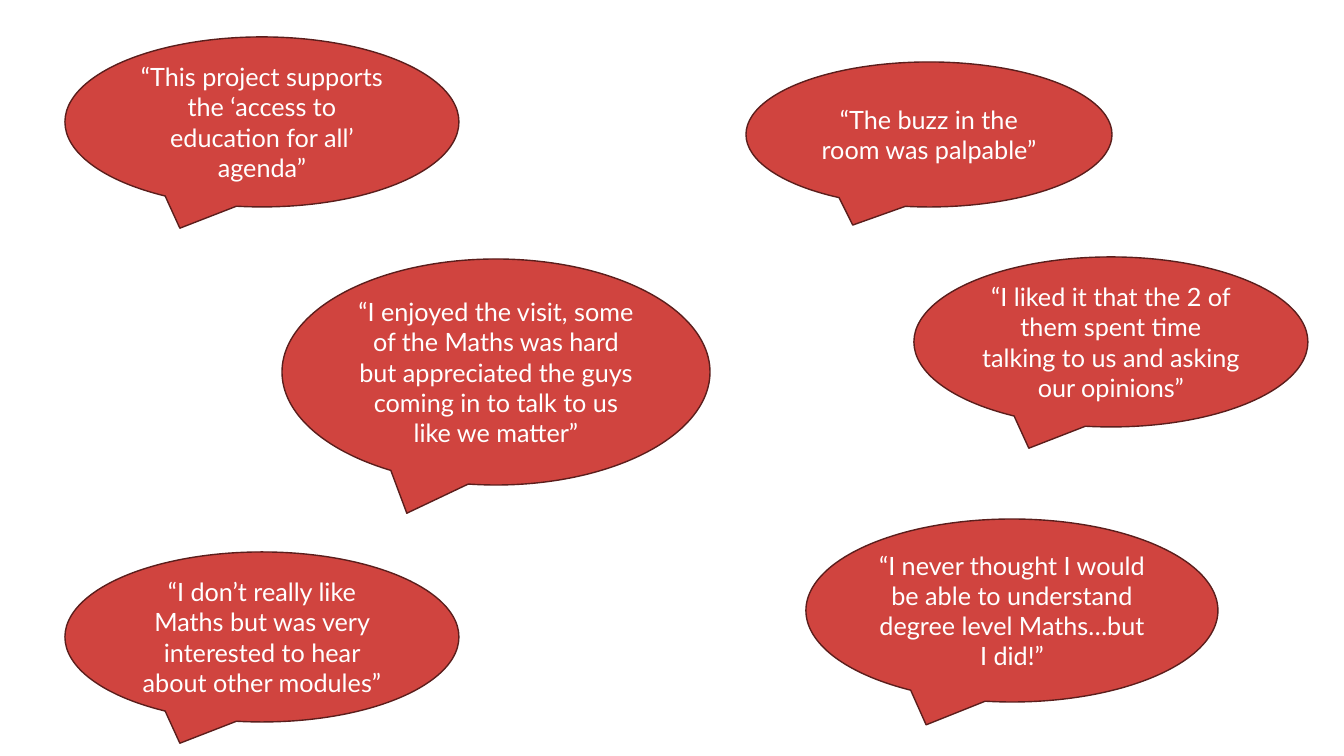
from pptx import Presentation
from pptx.dml.color import RGBColor
from pptx.enum import shapes, text
from pptx import util as u

THEME = {
    "fill": RGBColor.from_string("D0443F"),
    "line": RGBColor.from_string("5B1E1C"),
    "ink": RGBColor.from_string("FFFFFF"),
    "font": "Lato",
    "size": u.Pt(18),
    "edge": u.Pt(1),
}


def px(n):
    return u.Emu(round(n * 914400 / 100.8))


# Slide
deck = Presentation()
deck.slide_width, deck.slide_height = px(1344), px(756)
slide = deck.slides.add_slide(deck.slide_layouts[6])

# Quotes: left, top, width, height, words
STD = (394, 170)
quotes = [
    (65, 37, *STD, "“This project supports the ‘access to education for all’ agenda”"),
    (806, 519, 412, 183, "“I never thought I would be able to understand degree level Maths…but I did!”"),
    (914, 257, *STD, "“I liked it that the 2 of them spent time talking to us and asking our opinions”"),
    (746, 62, 366, 145, "“The buzz in the room was palpable”"),
    (282, 259, 428, 226, "“I enjoyed the visit, some of the Maths was hard but appreciated the guys "
                         "coming in to talk to us like we matter”"),
    (65, 552, *STD, "“I don’t really like Maths but was very interested to hear about other modules”"),
]

# Speech bubbles
for left, top, wide, high, words in quotes:
    bubble = slide.shapes.add_shape(
        shapes.MSO_SHAPE.OVAL_CALLOUT, px(left), px(top), px(wide), px(high))
    bubble.shadow.inherit = False
    bubble.fill.solid()
    bubble.fill.fore_color.rgb = THEME["fill"]
    bubble.line.color.rgb = THEME["line"]
    bubble.line.width = THEME["edge"]

    frame = bubble.text_frame
    frame.word_wrap = True
    frame.vertical_anchor = text.MSO_ANCHOR.MIDDLE
    frame.text = words
    para = frame.paragraphs[0]
    para.alignment = text.PP_ALIGN.CENTER
    para.font.name = THEME["font"]
    para.font.size = THEME["size"]
    para.font.color.rgb = THEME["ink"]

deck.save("out.pptx")
